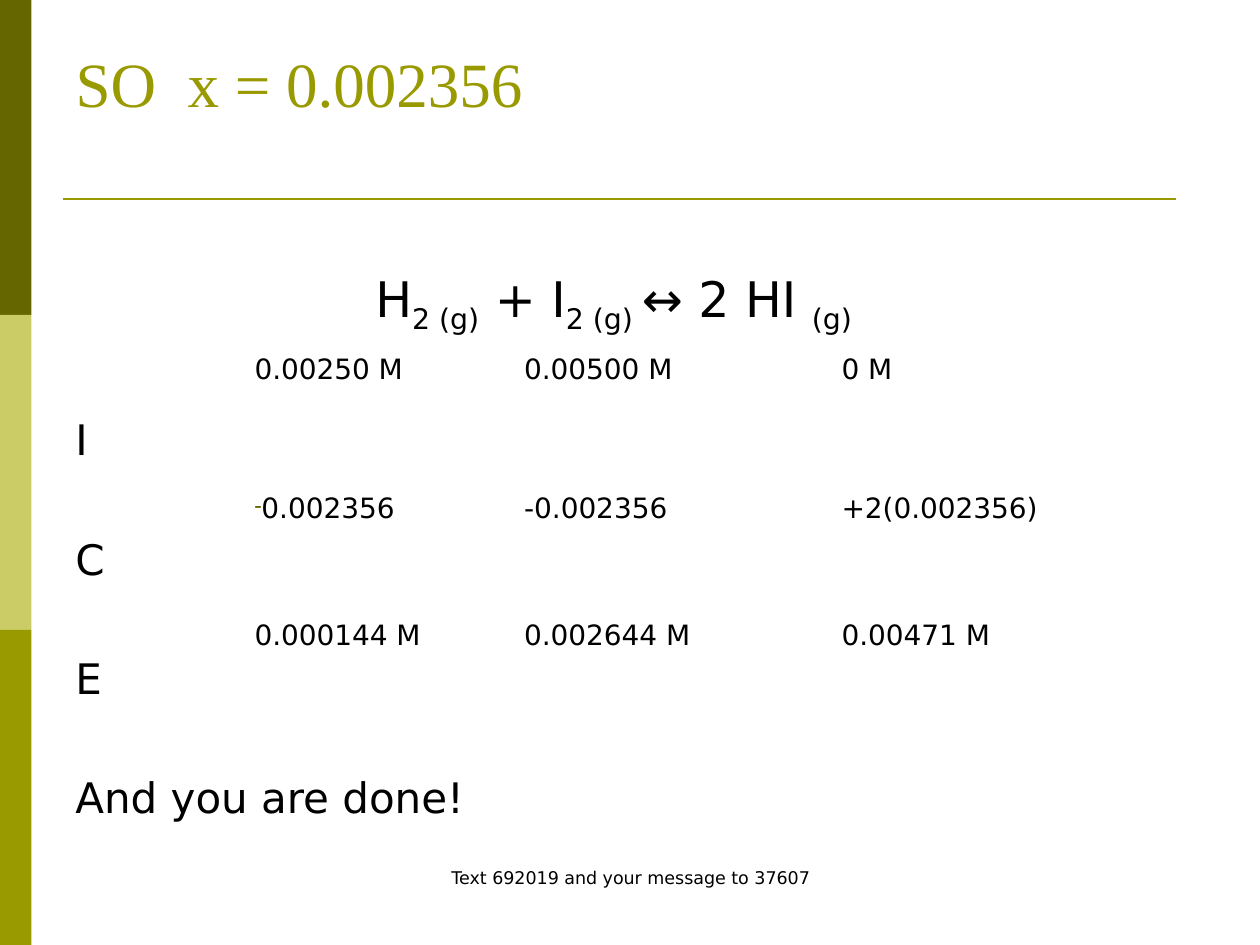
from lxml.etree import SubElement as Sub
from pptx import Presentation
from pptx.dml.color import RGBColor as RGB
from pptx.enum.shapes import MSO_CONNECTOR as CON, MSO_SHAPE as SHAPE
from pptx.enum.text import MSO_ANCHOR as ANCHOR, MSO_AUTO_SIZE as AUTO, PP_ALIGN as ALIGN
from pptx.oxml.ns import qn
from pptx.util import Inches, Pt

BLACK = RGB(0x00, 0x00, 0x00)
DARK = RGB(0x66, 0x66, 0x00)
PALE = RGB(0xCC, 0xCC, 0x66)
OLIVE = RGB(0x99, 0x99, 0x00)
SANS, SERIF = "DejaVu Sans", "Times New Roman"


def put(item, **vals):
    """Set each named value on an item."""
    for name, val in vals.items():
        setattr(item, name, val)


def write(para, text, size, face=SANS, color=BLACK, base=0):
    """Add one formatted run to a paragraph."""
    run = para.add_run()
    run.text = text
    put(run.font, size=Pt(size), name=face)
    run.font.color.rgb = color
    if base:
        run.font._element.set("baseline", str(base * 1000))


def add_box(slide, box):
    """Add a wrapping text box and return its frame."""
    frame = slide.shapes.add_textbox(*map(Inches, box)).text_frame
    frame.word_wrap = True
    return frame


def add_side(slide, box):
    """Stack three equal colour bands in the box."""
    left, top, width, height = box
    step = height / 3
    for row, color in enumerate((DARK, PALE, OLIVE)):
        band = slide.shapes.add_shape(
            SHAPE.RECTANGLE, *map(Inches, (left, top + row * step, width, step)))
        band.shadow.inherit = False
        band.fill.solid()
        band.fill.fore_color.rgb = color
        band.line.fill.background()


def add_rule(slide, left, top, width):
    """Draw the line below the title."""
    rule = slide.shapes.add_connector(
        CON.STRAIGHT, *map(Inches, (left, top, left + width, top)))
    rule.line.color.rgb = OLIVE
    rule.line.width = Pt(1.5)
    Sub(rule._element.spPr, qn("a:effectLst"))


def add_title(slide, box):
    """Place and format the title."""
    title = slide.shapes.title
    put(title, **dict(zip(("left", "top", "width", "height"), map(Inches, box))))
    put(title.text_frame, auto_size=AUTO.NONE, vertical_anchor=ANCHOR.TOP)
    para = title.text_frame.paragraphs[0]
    para.alignment = ALIGN.LEFT
    write(para, "SO  x = 0.002356", 36, SERIF, OLIVE)


def add_body(slide, box):
    """Write the reaction, the row letters and the closing words."""
    frame = add_box(slide, box)
    para = frame.paragraphs[0]
    para.space_before = Pt(3)
    para._p.get_or_add_pPr().set("marL", str(Inches(2.38)))
    parts = (("H", 0), ("2 (g)", -25), (" + I", 0), ("2 (g) ", -25),
             ("↔ 2 HI ", 0), ("(g)", -25))
    for text, base in parts:
        write(para, text, 28, base=base)
    rows = (("I", 45), ("C", 39.3), ("E", 39.3), ("And you are done!", 39.3))
    for text, gap in rows:
        para = frame.add_paragraph()
        para.space_before = Pt(gap)
        write(para, text, 24)


def add_dash(para):
    """Give a paragraph a small dash bullet."""
    props = para._p.get_or_add_pPr()
    Sub(Sub(props, qn("a:buClr")), qn("a:srgbClr"), val=str(DARK))
    Sub(props, qn("a:buSzPct"), val="75000")
    Sub(props, qn("a:buChar"), char="-")


def add_ice(slide, box):
    """Build the table of concentrations."""
    data = (("0.00250 M", "0.00500 M", "0 M"),
            ("0.002356", "-0.002356", "+2(0.002356)"),
            ("0.000144 M", "0.002644 M", "0.00471 M"))
    table = slide.shapes.add_table(3, 6, *map(Inches, box)).table
    put(table, first_row=False, horz_banding=False)
    for col, width in zip(table.columns, (1.5, 0.21, 0.4, 1.55, 0.97, 1.87)):
        col.width = Inches(width)
    for row, height in zip(table.rows, (1.1, 1.01, 1.01)):
        row.height = Inches(height)
    for cell in table.iter_cells():
        cell.fill.background()
    for row, first, last in ((0, 1, 2), (1, 0, 1), (2, 0, 1)):
        table.cell(row, first).merge(table.cell(row, last))
    for row, texts in enumerate(data):
        for col, text in zip((0, 3, 5), texts):
            para = table.cell(row, col).text_frame.paragraphs[0]
            para.space_before = Pt(3)
            write(para, text, 16)
    add_dash(table.cell(1, 0).text_frame.paragraphs[0])


def add_foot(slide, box):
    """Write the centred footer."""
    para = add_box(slide, box).paragraphs[0]
    para.alignment = ALIGN.CENTER
    write(para, "Text 692019 and your message to 37607", 10)


def main():
    """Build and save the slide."""
    deck = Presentation()
    put(deck, slide_width=Inches(10), slide_height=Inches(7.5))
    slide = deck.slides.add_slide(deck.slide_layouts[5])
    add_side(slide, (0, 0, 0.25, 7.5))
    add_rule(slide, 0.5, 1.58, 8.83)
    add_title(slide, (0.5, 0.3, 9, 1.25))
    add_body(slide, (0.5, 2.08, 9.25, 4.83))
    add_ice(slide, (1.92, 2.76, 6.5, 3.12))
    add_foot(slide, (3.42, 6.83, 3.17, 0.5))
    deck.save("out.pptx")


if __name__ == "__main__":
    main()
